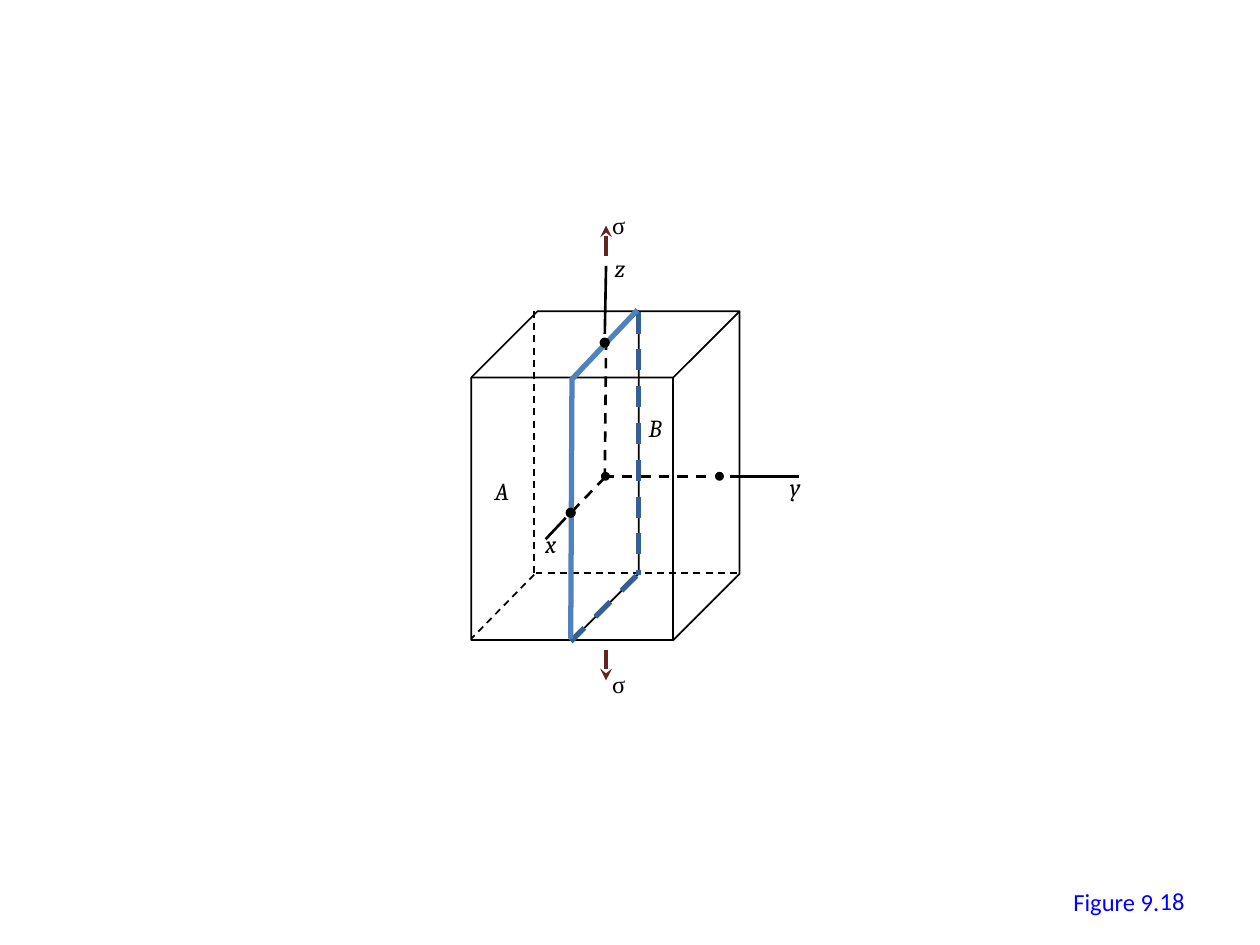
from lxml import etree
from pptx import Presentation
from pptx import util as u
from pptx.dml.color import RGBColor
from pptx.enum import dml, shapes, text
from pptx.oxml.ns import qn

BLACK, BLUE, NAVY, MAROON, CAPTION = "000000", "4F81BD", "376092", "632523", "0000FF"
COLUMNS = 100


def color(value):
    return RGBColor.from_string(value)


class Figure:
    """Draws styled elements on one slide, measured in square cells of a 100 by 75 grid."""

    def __init__(self, deck):
        self.slide = deck.slides.add_slide(deck.slide_layouts[6])
        self.cell = deck.slide_width / COLUMNS
        self.size = u.Pt(14)

    def at(self, *cells):
        return [u.Emu(round(c * self.cell)) for c in cells]

    def outline(self, item, ink, weight, dashed=False):
        item.line.color.rgb = color(ink)
        item.line.width = u.Pt(weight)
        if dashed:
            item.line.dash_style = dml.MSO_LINE.DASH

    def line(self, start, end, weight=1.5, ink=BLACK, dashed=False, arrow=False):
        edge = self.slide.shapes.add_connector(
            shapes.MSO_CONNECTOR.STRAIGHT, *self.at(*start, *end))
        self.outline(edge, ink, weight, dashed)
        properties = edge._element.spPr
        if arrow:
            etree.SubElement(properties.find(qn("a:ln")), qn("a:tailEnd"), type="stealth")
        etree.SubElement(properties, qn("a:effectLst"))

    def block(self, left, top, width, height, depth):
        cube = self.slide.shapes.add_shape(
            shapes.MSO_SHAPE.CUBE, *self.at(left, top, width, height))
        cube.adjustments[0] = depth
        cube.fill.background()
        cube.shadow.inherit = False
        self.outline(cube, BLACK, 1)

    def dot(self, x, y, size):
        point = self.slide.shapes.add_shape(
            shapes.MSO_SHAPE.OVAL, *self.at(x - size / 2, y - size / 2, size, size))
        point.fill.solid()
        point.fill.fore_color.rgb = color(BLACK)
        point.shadow.inherit = False
        self.outline(point, BLACK, 1.5)

    def trace(self, corners, ink, weight):
        first, *rest = [self.at(*corner) for corner in corners]
        builder = self.slide.shapes.build_freeform(*first, scale=1.0)
        builder.add_line_segments(rest, close=False)
        path = builder.convert_to_shape()
        path.fill.background()
        path.shadow.inherit = False
        self.outline(path, ink, weight)

    def label(self, words, left, top, width, font, height=3.4, ink=BLACK,
              italic=False, right=False):
        box = self.slide.shapes.add_textbox(*self.at(left, top, width, height))
        frame = box.text_frame
        frame.word_wrap = right
        if right:
            frame.vertical_anchor = text.MSO_ANCHOR.MIDDLE
        else:
            frame.auto_size = text.MSO_AUTO_SIZE.SHAPE_TO_FIT_TEXT
        paragraph = frame.paragraphs[0]
        paragraph.alignment = text.PP_ALIGN.RIGHT if right else text.PP_ALIGN.LEFT
        run = paragraph.add_run()
        run.text = words
        run.font.name, run.font.size = font, self.size
        run.font.italic = italic
        run.font.color.rgb = color(ink)


def main():
    deck = Presentation()
    deck.slide_width, deck.slide_height = u.Inches(10), u.Inches(7.5)
    figure = Figure(deck)

    figure.label("Figure 9.", 84.2, 69.9, 8.9, "Calibri", ink=CAPTION)
    figure.label("18", 71.7, 69.5, 23.3, "Calibri", height=4, ink=CAPTION, right=True)

    hidden_corner = (42.4, 45.6)
    figure.line((42.4, 24.7), hidden_corner, 1, dashed=True)
    for left in (37.4, 45.4):
        figure.block(left, 24.7, 13.3, 26.1, 0.396)
    figure.line((42.5, 45.5), (58.8, 45.5), 1, dashed=True)
    figure.line(hidden_corner, (37.4, 50.7), 1, dashed=True)

    for start, end in (((47.9, 37.8), (56.3, 37.8)),
                       ((48, 38), (48.1, 27.4)),
                       ((45.4, 40.6), (48, 37.9))):
        figure.line(start, end, dashed=True)
    for start, end in (((43.3, 42.8), (44.9, 41.1)),
                       ((57.9, 37.8), (63.4, 37.8)),
                       ((48, 26.5), (48.1, 21.1))):
        figure.line(start, end)
    for start, end in ((20.3, 17.9), (51.6, 54)):
        figure.line((48.1, start), (48.1, end), 2.25, MAROON, arrow=True)

    figure.line((50.7, 24.8), (50.7, 45.6), 3, NAVY, dashed=True)
    figure.line((50.5, 45.7), (45.3, 50.9), 3, NAVY, dashed=True)
    figure.trace([(50.6, 24.6), (45.4, 30.1), (45.3, 50.7)], BLUE, 3)

    for x, y, size in ((48.05, 37.8, 0.5), (57.1, 37.8, 0.5),
                       (45.3, 40.7, 0.6), (48, 27.2, 0.6)):
        figure.dot(x, y, size)

    for name, left, top, width in (("x", 42.3, 41.5, 3.4), ("y", 61.7, 37, 3.4),
                                   ("z", 47.8, 19.6, 3.3), ("A", 38.3, 37.3, 3.7),
                                   ("B", 50.5, 32.3, 3.7)):
        figure.label(name, left, top, width, "Cambria", italic=True)
    for top in (16.2, 52.6):
        figure.label("σ", 47.6, top, 3.1, "Times New Roman")

    deck.save("out.pptx")


if __name__ == "__main__":
    main()
